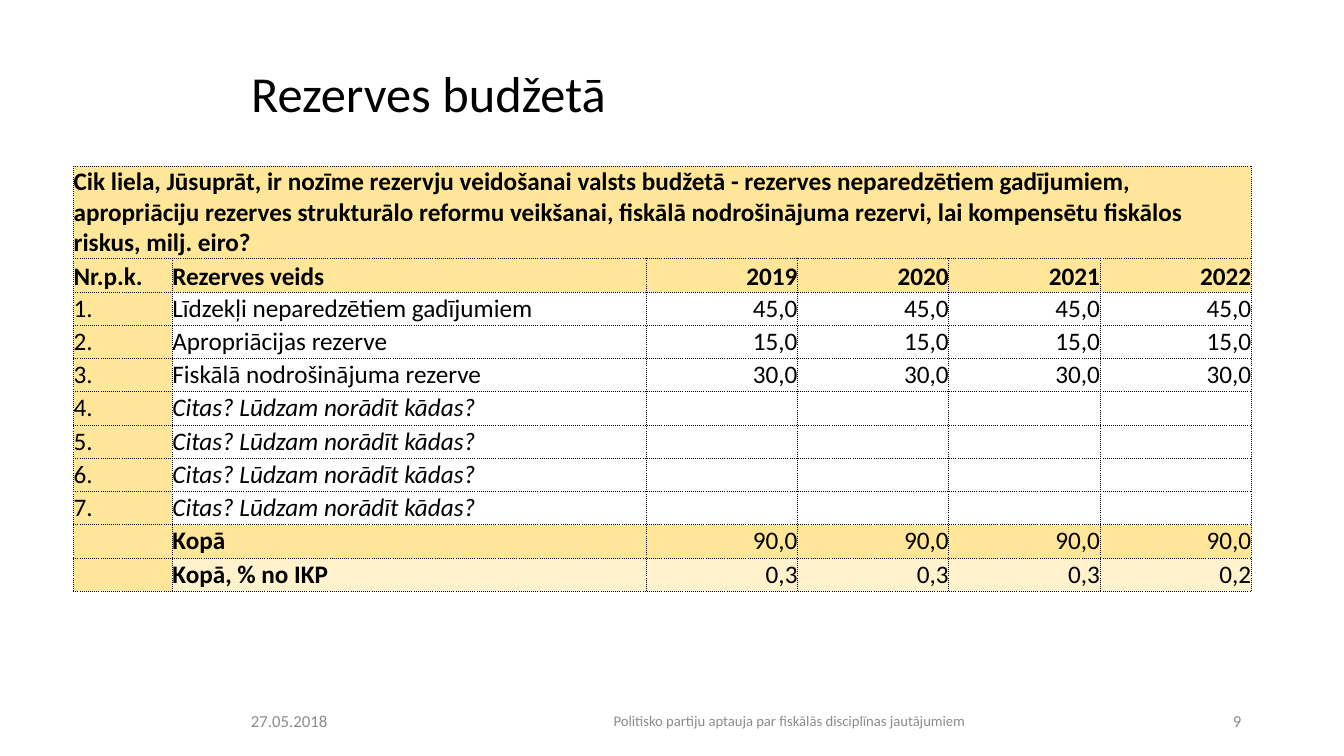
from lxml import etree
from pptx import Presentation
from pptx.dml.color import RGBColor
from pptx.enum.text import MSO_ANCHOR, PP_ALIGN
from pptx.oxml.ns import qn
from pptx.util import Inches, Pt

LEFT, CENTER, RIGHT = PP_ALIGN.LEFT, PP_ALIGN.CENTER, PP_ALIGN.RIGHT
MIDDLE, BOTTOM = MSO_ANCHOR.MIDDLE, MSO_ANCHOR.BOTTOM
BLACK = RGBColor(0x00, 0x00, 0x00)
GRAY = RGBColor(0x8C, 0x8C, 0x8C)
GOLD = RGBColor(0xFF, 0xE6, 0x99)
CREAM = RGBColor(0xFF, 0xF2, 0xCC)


def write(paragraph, text, size, color, align=LEFT, bold=False, italic=False):
    paragraph.text = text
    paragraph.alignment = align
    font_format = {"name": "Calibri", "size": Pt(size), "bold": bold, "italic": italic}
    for attribute, value in font_format.items():
        setattr(paragraph.font, attribute, value)
    paragraph.font.color.rgb = color


def add_dotted_borders(cell):
    properties = cell._tc.get_or_add_tcPr()
    for side in ("a:lnL", "a:lnR", "a:lnT", "a:lnB"):
        line = etree.SubElement(properties, qn(side), w=str(Pt(0.5)))
        fill = etree.SubElement(line, qn("a:solidFill"))
        etree.SubElement(fill, qn("a:srgbClr"), val=str(BLACK))
        etree.SubElement(line, qn("a:prstDash"), val="sysDot")


prs = Presentation()
prs.slide_width = Inches(13.33)
prs.slide_height = Inches(7.5)
slide = prs.slides.add_slide(prs.slide_layouts[5])

title = slide.shapes.title
title.left, title.top = Inches(2.39), Inches(0.4)
title.width, title.height = Inches(10.02), Inches(1.11)
title.text_frame.vertical_anchor = MIDDLE
heading = title.text_frame.paragraphs[0]
write(heading, "Rezerves budžetā", 36, BLACK)
heading.line_spacing = 0.9

QUESTION = (
    "Cik liela, Jūsuprāt, ir nozīme rezervju veidošanai valsts budžetā - rezerves "
    "neparedzētiem gadījumiem, apropriāciju rezerves strukturālo reformu veikšanai, "
    "fiskālā nodrošinājuma rezervi, lai kompensētu fiskālos riskus, milj. eiro?"
)
OTHER = "Citas? Lūdzam norādīt kādas?"
reserves = [
    [QUESTION] + [""] * 5,
    ["Nr.p.k.", "Rezerves veids", "2019", "2020", "2021", "2022"],
    ["1.", "Līdzekļi neparedzētiem gadījumiem"] + ["45,0"] * 4,
    ["2.", "Apropriācijas rezerve"] + ["15,0"] * 4,
    ["3.", "Fiskālā nodrošinājuma rezerve"] + ["30,0"] * 4,
    *[[f"{number}.", OTHER] + [""] * 4 for number in range(4, 8)],
    ["", "Kopā"] + ["90,0"] * 4,
    ["", "Kopā, % no IKP", "0,3", "0,3", "0,3", "0,2"],
]
HEADER_ROW, TOTAL_ROW, SHARE_ROW = 1, 9, 10
column_widths = [0.98, 4.7] + [1.5] * 4
row_heights = [0.9] + [0.33] * 10

table = slide.shapes.add_table(
    len(reserves), len(column_widths),
    Inches(0.73), Inches(1.65), Inches(11.69), Inches(4.2),
).table
table.first_row = False
table.horz_banding = False
for column, width in zip(table.columns, column_widths):
    column.width = Inches(width)
for row, height in zip(table.rows, row_heights):
    row.height = Inches(height)

for r, values in enumerate(reserves):
    for c, value in enumerate(values):
        cell = table.cell(r, c)
        cell.margin_left = cell.margin_right = cell.margin_top = cell.margin_bottom = 0
        cell.vertical_anchor = BOTTOM if r == HEADER_ROW else MIDDLE
        add_dotted_borders(cell)
        if c == 0 or r <= HEADER_ROW or r == TOTAL_ROW:
            cell.fill.solid()
            cell.fill.fore_color.rgb = GOLD
        elif r == SHARE_ROW:
            cell.fill.solid()
            cell.fill.fore_color.rgb = CREAM
        else:
            cell.fill.background()
        write(
            cell.text_frame.paragraphs[0], value, 18, BLACK,
            align=RIGHT if c >= 2 else LEFT,
            bold=r <= HEADER_ROW or (r >= TOTAL_ROW and c == 1),
            italic=value == OTHER,
        )
table.cell(0, 0).merge(table.cell(0, 5))

footers = [
    ("Politisko partiju aptauja par fiskālās disciplīnas jautājumiem", 4.31, 7.04, 10.5, CENTER),
    ("27.05.2018", 2.39, 1.64, 12, LEFT),
    ("9", 11.62, 0.79, 12, RIGHT),
]
for text, left, width, size, align in footers:
    footer = slide.shapes.add_textbox(Inches(left), Inches(6.95), Inches(width), Inches(0.4))
    footer.text_frame.word_wrap = True
    footer.text_frame.vertical_anchor = MIDDLE
    write(footer.text_frame.paragraphs[0], text, size, GRAY, align)

prs.save("out.pptx")
